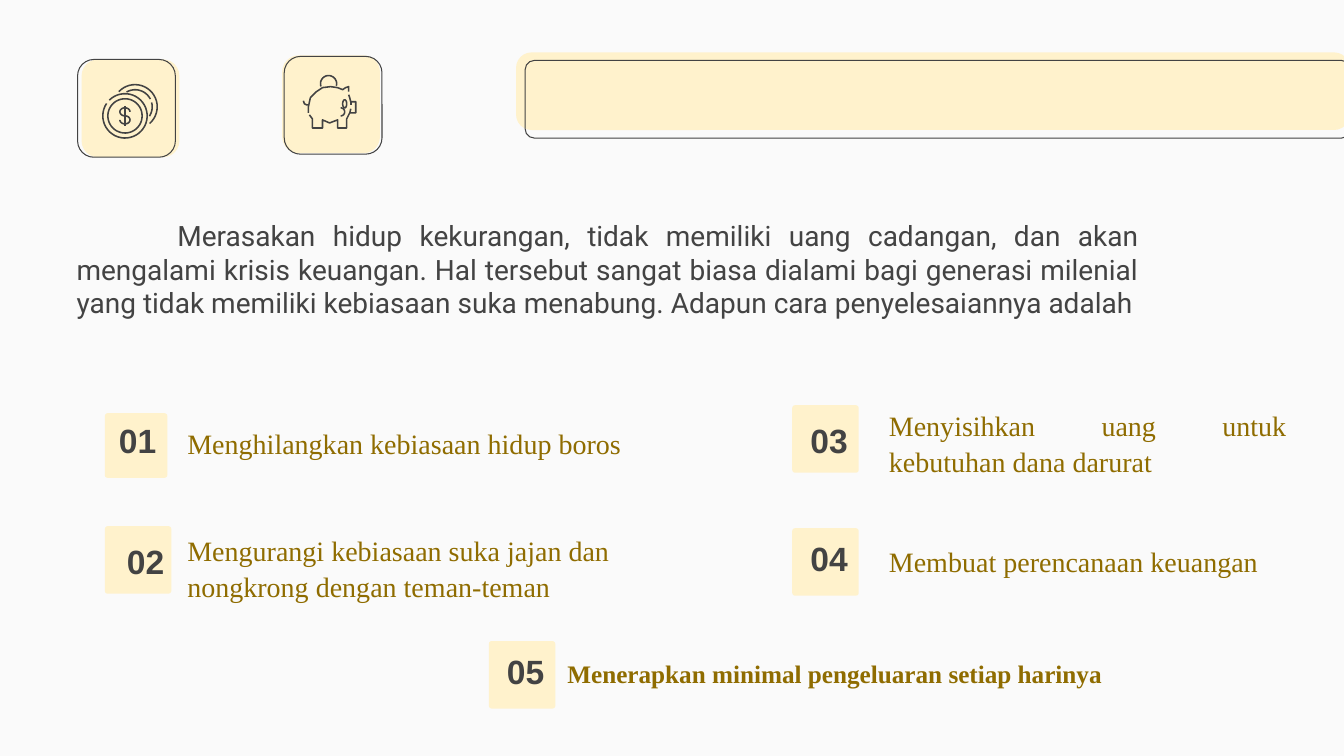
from math import cos, sin, radians
from pptx import Presentation
from pptx.dml.color import RGBColor
from pptx.enum.shapes import MSO_SHAPE
from pptx.enum.text import MSO_ANCHOR, PP_ALIGN
from pptx.util import Pt

PX = 9144  # 100 px to the inch
CREAM, DARK, GOLD, PALE = "FFF2CC", "434343", "8F6C00", "FAFAFA"


def px(*nums):
    return [round(n * PX) for n in nums]


def paint(part, color):
    part.solid()
    part.fore_color.rgb = RGBColor.from_string(color)


def style(shape, fill=None, line=None, width=0.75):
    shape.shadow.inherit = False
    for part, color in ((shape.fill, fill), (shape.line.fill, line)):
        if color:
            paint(part, color)
        else:
            part.background()
    if line:
        shape.line.width = Pt(width)


def tile(slide, box, adj, **look):
    shape = slide.shapes.add_shape(MSO_SHAPE.ROUNDED_RECTANGLE, *px(*box))
    shape.adjustments[0] = adj
    style(shape, **look)


def write(slide, box, text, font, color, pad=(10, 5), anchor=MSO_ANCHOR.TOP,
          indent=0, **para):
    frame = slide.shapes.add_textbox(*px(*box)).text_frame
    side, edge = px(*pad)
    form = dict(word_wrap=True, vertical_anchor=anchor, margin_left=side,
                margin_right=side, margin_top=edge, margin_bottom=edge)
    for key, val in form.items():
        setattr(frame, key, val)
    line = frame.paragraphs[0]
    for key, val in para.items():
        setattr(line, key, val)
    if indent:
        line._p.get_or_add_pPr().set("indent", str(indent * PX))
    run = line.add_run()
    run.text = text
    for key, val in font.items():
        setattr(run.font, key, val)
    run.font.color.rgb = RGBColor.from_string(color)


# Icon strokes
def arc(x, y, rx, ry, start, end):
    steps = max(8, abs(end - start) // 8)
    turns = [radians(start + (end - start) * i / steps) for i in range(steps + 1)]
    return [(x + rx * cos(t), y + ry * sin(t)) for t in turns]


def draw(slide, left, top, strokes):
    for stroke in strokes:
        dots = [px(left + x, top + y) for x, y in stroke]
        pen = slide.shapes.build_freeform(*dots[0], scale=1.0)
        pen.add_line_segments(dots[1:], close=False)
        style(pen.convert_to_shape(), line=DARK, width=1.1)


COINS = [
    arc(47, 56, 22, 22, 225, 574),
    arc(47, 56, 17, 17, 0, 360),
    arc(57, 47, 22, 22, 223, 409),
    arc(57, 47, 17, 17, 240, 333),
    arc(57, 47, 17, 17, 345, 393),
    arc(47, 52, 5, 4, 0, -270) + arc(47, 60, 5, 4, -90, 180),
    [(47, 46), (47, 66)],
]
PIG = [
    # Legs and snout
    [(27, 59), (30, 63), (30, 72), (40, 72), (40, 64), (47, 67), (55, 64),
     (55, 72), (64, 72), (64, 63), (67, 57), (73, 57), (73, 46), (68, 46),
     (67, 42), (66, 39)],
    [(68, 46), (68, 49)],
    [(67, 57), (68, 53)],
    # Back and ear
    [(26, 57), (26, 51), (28, 42), (34, 36), (40, 32), (48, 31), (55, 32),
     (60, 34), (63, 32), (66, 31), (66, 36)],
    # Tail, coin, eye, cheek
    [(21, 45), (22, 48), (24, 49), (26, 49)],
    arc(46, 28, 8, 8, 160, 375),
    arc(62, 48, 2, 4, 0, 360),
    arc(58, 56, 4, 4, -90, 90),
]


def badge(slide, box, shift, strokes):
    x, y, w, h = box
    dx, dy = shift
    tile(slide, box, 0.167, fill=CREAM)
    tile(slide, (x + dx, y + dy, w, h), 0.167, line=DARK)
    draw(slide, x + min(dx, 0), y + min(dy, 0), strokes)


def banner(slide, box):
    x, y, w, h = box
    tile(slide, box, 0.199, fill=CREAM)
    tile(slide, (x + 9, y + 8, w - 8, h), 0.119, line=DARK)


def intro(slide, box):
    write(slide, box,
          "Merasakan hidup kekurangan, tidak memiliki uang cadangan, dan akan "
          "mengalami krisis keuangan. Hal tersebut sangat biasa dialami bagi "
          "generasi milenial yang tidak memiliki kebiasaan suka menabung. "
          "Adapun cara penyelesaiannya adalah",
          dict(name="Roboto", size=Pt(20)), DARK, pad=(13, 13), indent=100,
          alignment=PP_ALIGN.JUSTIFY)


def point(slide, box, num, shift, text, area, align=PP_ALIGN.LEFT,
          size=20, bold=False, **para):
    x, y = box[:2]
    tile(slide, box, 0.043, fill=CREAM)
    write(slide, (x + shift[0], y + shift[1], 102, 70), num,
          dict(name="Arial", size=Pt(24), bold=True), DARK, pad=(13, 13),
          anchor=MSO_ANCHOR.MIDDLE, alignment=PP_ALIGN.RIGHT)
    dx, dy, w, h = area
    write(slide, (x + dx, y + dy, w, h), text,
          dict(name="Times New Roman", size=Pt(size), bold=bold), GOLD,
          alignment=align, **para)


def main():
    deck = Presentation()
    deck.slide_width, deck.slide_height = 12192000, 6858000
    slide = deck.slides.add_slide(deck.slide_layouts[6])
    paint(slide.background.fill, PALE)

    # Header
    banner(slide, (512, 52, 827, 77))
    badge(slide, (81, 59, 97, 97), (-4, 0), COINS)
    badge(slide, (280, 55, 97, 97), (2, 1), PIG)
    intro(slide, (63, 204, 1080, 161))

    # Numbered points
    loose = dict(line_spacing=1.07, space_after=Pt(8))
    full = dict(loose, align=PP_ALIGN.JUSTIFY)
    point(slide, (104, 410, 62, 64), "01", (-38, -8),
          "Menghilangkan kebiasaan hidup boros", (72, 6, 461, 44), **full)
    point(slide, (104, 522, 66, 67), "02", (-30, 0),
          "Mengurangi kebiasaan suka jajan dan nongkrong dengan teman-teman",
          (72, 0, 504, 80), **loose)
    point(slide, (786, 402, 66, 67), "03", (-34, 0),
          "Menyisihkan uang untuk kebutuhan dana darurat",
          (86, -4, 414, 80), **full)
    point(slide, (786, 524, 66, 67), "04", (-34, -5),
          "Membuat perencanaan keuangan", (86, 9, 389, 44), **full)
    point(slide, (485, 636, 66, 67), "05", (-34, -5),
          "Menerapkan minimal pengeluaran setiap harinya",
          (68, 12, 562, 40), size=18, bold=True)

    deck.save("out.pptx")


if __name__ == "__main__":
    main()
